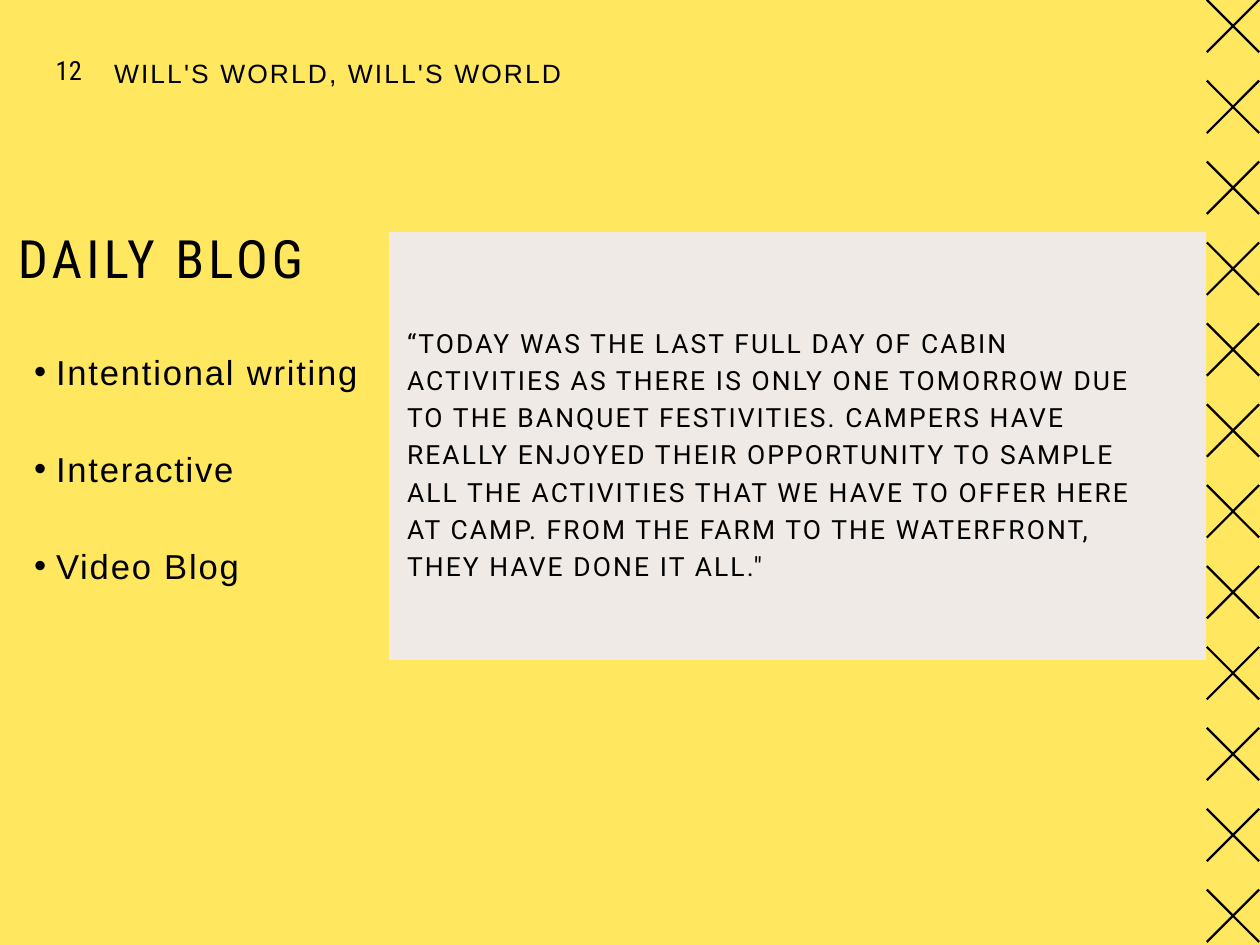
from lxml import etree
from pptx import Presentation
from pptx import util as u
from pptx.dml.color import RGBColor
from pptx.enum import text
from pptx.oxml import ns

PX = 7742  # EMU in one px
WIDTH, HEIGHT = 1260, 945
BLACK, YELLOW, STONE = "000000", "FFE860", "EFEAE5"

# size, line and gap in points, spacing in hundredths of a point
HEADING = {"name": "Roboto Condensed", "size": 32.2, "line": 34.8, "spacing": 260}
LIST = {"name": "Arial", "size": 21.1, "line": 29.6, "spacing": 110, "gap": 29.6}
RUNNING = {"name": "Arial", "size": 16.1, "line": 22.5, "spacing": 130}
NUMBER = {"name": "Roboto Condensed", "size": 16.1, "line": 17.4, "spacing": 20,
          "align": text.PP_ALIGN.RIGHT}
QUOTE = {"name": "Roboto", "size": 16.1, "line": 22.6, "spacing": 130}


def color(hex_code):
    return RGBColor.from_string(hex_code)


def place(part, left, top, width, height):
    box = {"left": left, "top": top, "width": width, "height": height}
    for side, px in box.items():
        setattr(part, side, px * PX)


def add_bullet(paragraph):
    props = paragraph._p.get_or_add_pPr()
    props.set("marL", str(45 * PX))
    props.set("indent", str(-22 * PX))
    etree.SubElement(props, ns.qn("a:buFont")).set("typeface", "Arial")
    etree.SubElement(props, ns.qn("a:buChar")).set("char", "•")


def write(part, lines, style, bulleted=False):
    frame = part.text_frame
    layout = {"margin_left": 0, "margin_top": 0, "margin_right": 0, "margin_bottom": 0,
              "word_wrap": True, "auto_size": text.MSO_AUTO_SIZE.NONE,
              "vertical_anchor": text.MSO_ANCHOR.TOP}
    for key, value in layout.items():
        setattr(frame, key, value)
    for index, line in enumerate(lines):
        paragraph = frame.paragraphs[0] if index == 0 else frame.add_paragraph()
        if bulleted:
            add_bullet(paragraph)
        spacing = {"alignment": style.get("align", text.PP_ALIGN.LEFT),
                   "line_spacing": u.Pt(style["line"]),
                   "space_before": u.Pt(style.get("gap", 0) if index else 0),
                   "space_after": u.Pt(0)}
        for key, value in spacing.items():
            setattr(paragraph, key, value)
        run = paragraph.add_run()
        run.text = line
        run.font.name = style["name"]
        run.font.size = u.Pt(style["size"])
        run.font.color.rgb = color(BLACK)
        run._r.get_or_add_rPr().set("spc", str(style["spacing"]))


def add_label(slide, box, line, style):
    label = slide.shapes.add_textbox(0, 0, 0, 0)
    place(label, *box)
    write(label, [line], style)


def paint(shape, fill):
    shape.shadow.inherit = False
    shape.fill.solid()
    shape.fill.fore_color.rgb = color(fill)
    shape.line.fill.background()


def add_cross_border(slide, left, top, size, count):
    """Column of crosses in one outline, drawn in tenths of a px."""
    size, pitch, edge = size * 10, 809, 16
    middle, far = size // 2, size - edge
    cross = [(edge, 0), (0, edge), (middle - edge, middle), (0, far), (edge, size),
             (middle, middle + edge), (far, size), (size, far), (middle + edge, middle),
             (size, edge), (far, 0), (middle, middle - edge)]
    border = slide.shapes.build_freeform(*cross[0], scale=PX / 10)
    for index in range(count):
        points = [(x, y + index * pitch) for x, y in cross]
        if index:
            border.move_to(*points[0])
        border.add_line_segments(points[1:], close=True)
    paint(border.convert_to_shape(left * PX, top * PX), BLACK)


def add_header(slide, left, top):
    add_label(slide, (left, top + 5, 58, 30), "12", NUMBER)
    add_label(slide, (left + 90, top, 763, 35), "WILL'S WORLD, WILL'S WORLD", RUNNING)


def add_topics(slide, left, top, width):
    heading, topics = slide.placeholders
    place(heading, left + 7, top, width - 7, 58)
    write(heading, ["DAILY BLOG"], HEADING)
    place(topics, left, top + 112, width, 286)
    write(topics, ["Intentional writing", "Interactive", "Video Blog"], LIST, bulleted=True)


def add_quote(slide, left, top, width, height):
    panel = slide.shapes.build_freeform(0, 0, scale=PX)
    panel.add_line_segments([(width, 0), (width, height), (0, height)], close=True)
    paint(panel.convert_to_shape(left * PX, top * PX), STONE)
    add_label(slide, (left + 18, top + 90, 758, 256),
              "“TODAY WAS THE LAST FULL DAY OF CABIN ACTIVITIES AS THERE IS ONLY ONE "
              "TOMORROW DUE TO THE BANQUET FESTIVITIES. CAMPERS HAVE REALLY ENJOYED THEIR "
              "OPPORTUNITY TO SAMPLE ALL THE ACTIVITIES THAT WE HAVE TO OFFER HERE AT CAMP. "
              "FROM THE FARM TO THE WATERFRONT, THEY HAVE DONE IT ALL.\"", QUOTE)


def main():
    deck = Presentation()
    deck.slide_width, deck.slide_height = WIDTH * PX, HEIGHT * PX
    slide = deck.slides.add_slide(deck.slide_layouts[1])
    slide.background.fill.solid()
    slide.background.fill.fore_color.rgb = color(YELLOW)

    add_cross_border(slide, 1206, -1, 54, 12)
    add_header(slide, 24, 52)
    add_topics(slide, 11, 232, 370)
    add_quote(slide, 389, 232, 817, 428)
    deck.save("out.pptx")


if __name__ == "__main__":
    main()
